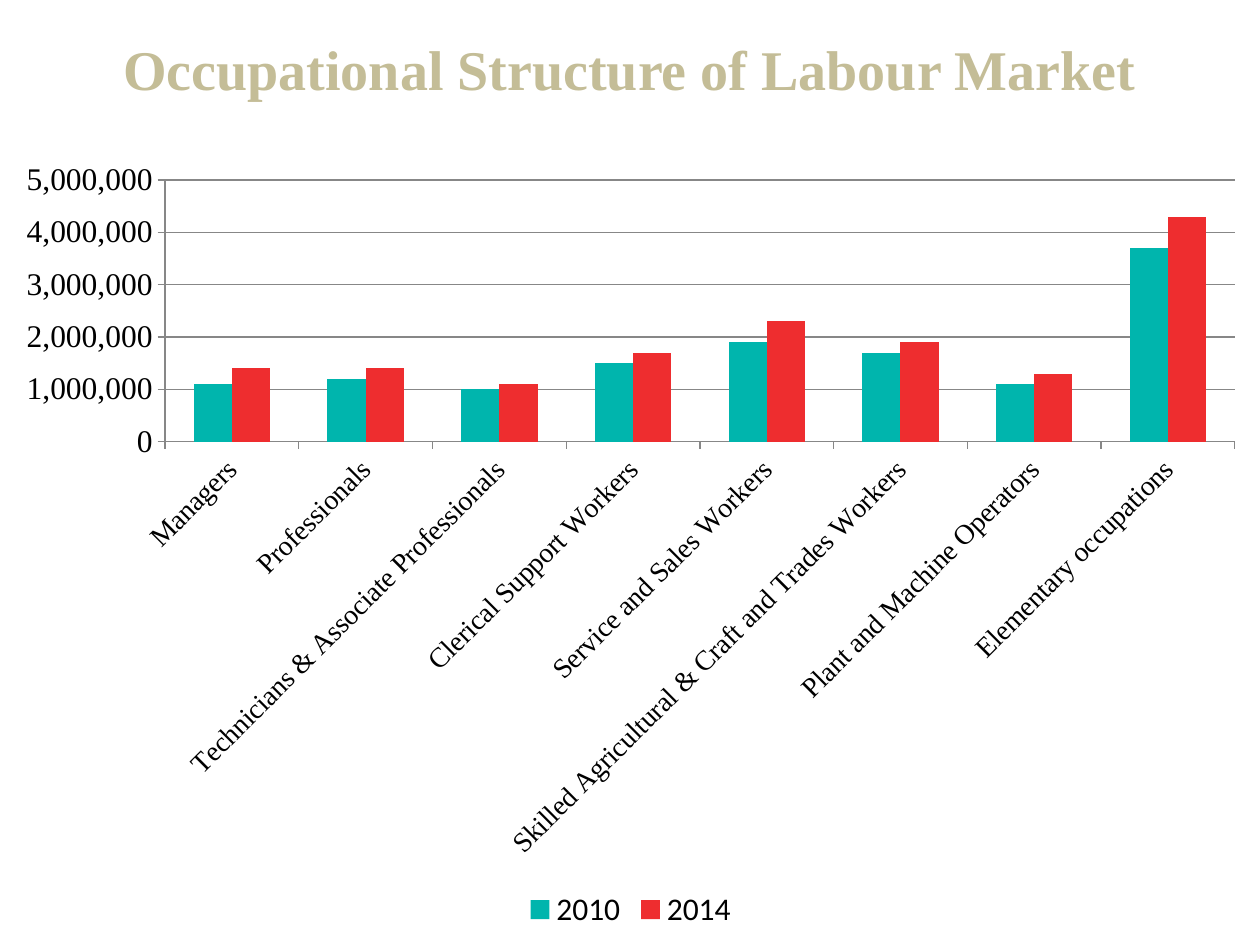
from pptx import Presentation
from pptx.chart.data import CategoryChartData
from pptx.dml.color import RGBColor
from pptx.enum.chart import XL_CHART_TYPE, XL_LEGEND_POSITION, XL_TICK_MARK
from pptx.enum.text import MSO_ANCHOR, PP_ALIGN
from pptx.util import Cm, Pt

COLOURS = {
    "title": "C4BD97",
    "text": "000000",
    "line": "878787",
    "2010": "00B5AD",
    "2014": "EE2D2F",
}

# Workers in each occupation, in millions: 2010, 2014
WORKERS = {
    "Managers": (1.1, 1.4),
    "Professionals": (1.2, 1.4),
    "Technicians & Associate Professionals": (1.0, 1.1),
    "Clerical Support Workers": (1.5, 1.7),
    "Service and Sales Workers": (1.9, 2.3),
    "Skilled Agricultural & Craft and Trades Workers": (1.7, 1.9),
    "Plant and Machine Operators": (1.1, 1.3),
    "Elementary occupations": (3.7, 4.3),
}
YEARS = ("2010", "2014")
MILLION = 1_000_000


class SlideBuilder:
    serif = "Times New Roman"
    sans = "Calibri"

    def __init__(self, page):
        self.page = page

    def colour(self, name):
        return RGBColor.from_string(COLOURS[name])

    def style_font(self, font, name, size, colour="text", bold=False):
        font.name = name
        font.size = Pt(size)
        font.bold = bold
        font.color.rgb = self.colour(colour)

    def title(self, text, left, top, width, height):
        box = self.page.shapes.add_textbox(Cm(left), Cm(top), Cm(width), Cm(height))
        frame = box.text_frame
        frame.word_wrap = True
        frame.vertical_anchor = MSO_ANCHOR.MIDDLE
        frame.text = text
        para = frame.paragraphs[0]
        para.alignment = PP_ALIGN.CENTER
        self.style_font(para.runs[0].font, self.serif, 32, "title", True)

    def style_axis(self, axis, size):
        axis.major_tick_mark = XL_TICK_MARK.OUTSIDE
        axis.minor_tick_mark = XL_TICK_MARK.NONE
        axis.format.line.color.rgb = self.colour("line")
        self.style_font(axis.tick_labels.font, self.serif, size)

    def column_chart(self, left, top, width, height):
        data = CategoryChartData(number_format="#,##0")
        data.categories = list(WORKERS)
        for year, values in zip(YEARS, zip(*WORKERS.values())):
            data.add_series(year, [round(value * MILLION) for value in values])
        chart = self.page.shapes.add_chart(
            XL_CHART_TYPE.COLUMN_CLUSTERED,
            Cm(left), Cm(top), Cm(width), Cm(height), data,
        ).chart
        chart.has_title = False
        self.style_font(chart.font, self.sans, 18)

        # Columns
        plot = chart.plots[0]
        plot.gap_width = 150
        plot.overlap = 0
        plot.vary_by_categories = False
        for series in plot.series:
            series.format.fill.solid()
            series.format.fill.fore_color.rgb = self.colour(series.name)

        # Axes, with slanted category labels
        self.style_axis(chart.category_axis, 16)
        labels = chart.category_axis._element.txPr
        labels.bodyPr.set("rot", "-2700000")
        scale = chart.value_axis
        self.style_axis(scale, 18)
        scale.minimum_scale = 0
        scale.maximum_scale = 5 * MILLION
        scale.major_unit = MILLION
        scale.has_major_gridlines = True
        scale.major_gridlines.format.line.color.rgb = self.colour("line")
        scale.tick_labels.number_format = "#,##0"
        scale.tick_labels.number_format_is_linked = False

        # Legend
        chart.has_legend = True
        chart.legend.position = XL_LEGEND_POSITION.BOTTOM
        chart.legend.include_in_layout = False
        self.style_font(chart.legend.font, self.sans, 18)


def main():
    deck = Presentation()
    deck.slide_width, deck.slide_height = Cm(25.4), Cm(19.05)
    builder = SlideBuilder(deck.slides.add_slide(deck.slide_layouts[6]))
    builder.title("Occupational Structure of Labour Market", 0, 0, 25.4, 2.74)
    builder.column_chart(0.03, 2.97, 25.37, 15.88)
    deck.save("out.pptx")


if __name__ == "__main__":
    main()
